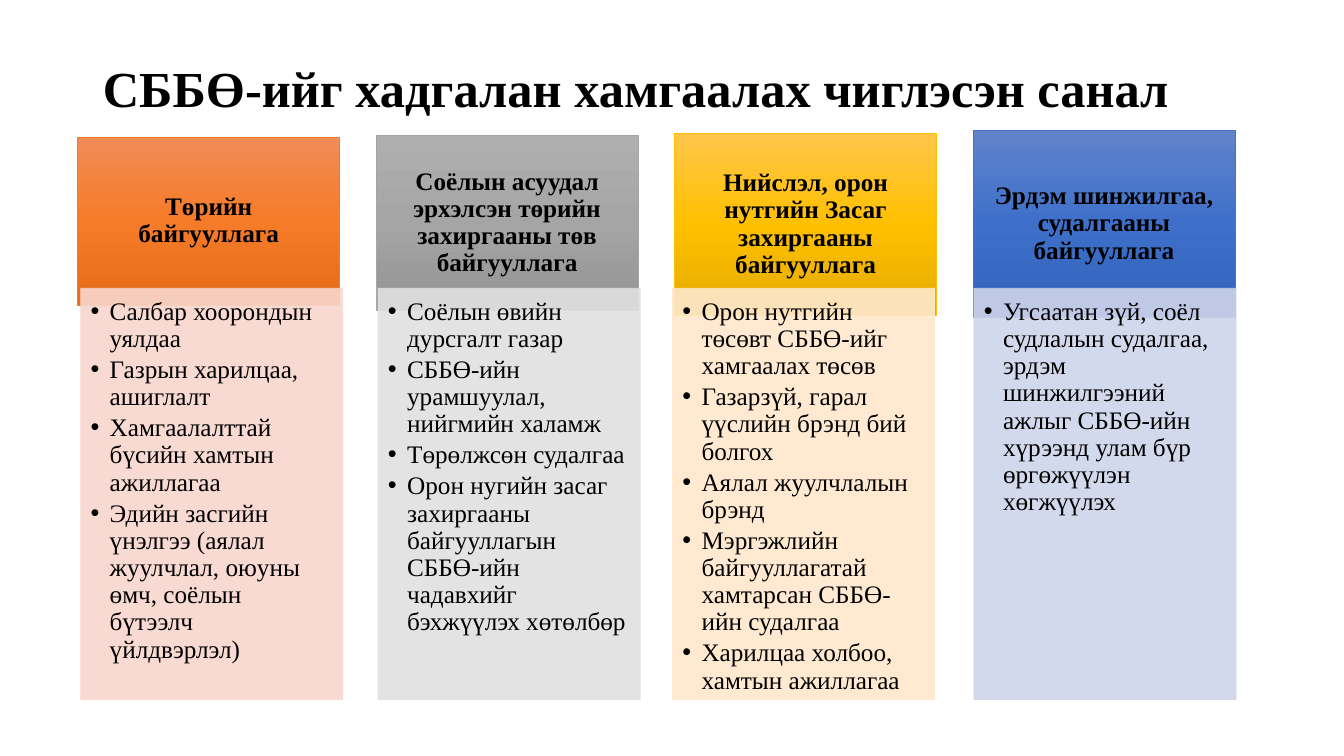
import copy
import pptx
import pptx.dml.color
import pptx.enum.shapes
import pptx.enum.text
import pptx.oxml.ns
import pptx.oxml.xmlchemy
import pptx.util
from lxml import etree

Inches = pptx.util.Inches
Pt = pptx.util.Pt
qn = pptx.oxml.ns.qn
ALIGN = pptx.enum.text.PP_ALIGN
ANCHOR = pptx.enum.text.MSO_ANCHOR

COLORS = {"text": "000000"}
FIRST_LEFT, PITCH, WIDTH = 0.77, 2.96, 2.6
BODY_TOP, BODY_HEIGHT = 2.86, 4.08
TITLE = "СББӨ-ийг хадгалан хамгаалах чиглэсэн санал"

COLUMNS = [
    {
        "header": "Төрийн байгууллага",
        "top": 1.36, "height": 1.67, "body_shift": 0.03,
        "colors": {"stops": ["F18C57", "F67B28", "E56C19"], "line": "ED7D31", "body": "F8D7CE"},
        "points": [
            "Салбар хоорондын уялдаа",
            "Газрын харилцаа, ашиглалт",
            "Хамгаалалттай бүсийн хамтын ажиллагаа",
            "Эдийн засгийн үнэлгээ (аялал жуулчлал, оюуны өмч, соёлын бүтээлч үйлдвэрлэл)",
        ],
    },
    {
        "header": "Соёлын асуудал эрхэлсэн төрийн захиргааны төв байгууллага",
        "top": 1.34, "height": 1.74, "body_shift": 0.02,
        "colors": {"stops": ["AFAFAF", "A5A5A5", "939393"], "line": "A5A5A5", "body": "E1E1E1"},
        "points": [
            "Соёлын өвийн дурсгалт газар",
            "СББӨ-ийн урамшуулал, нийгмийн халамж",
            "Төрөлжсөн судалгаа",
            "Орон нугийн засаг захиргааны байгууллагын СББӨ-ийн чадавхийг бэхжүүлэх хөтөлбөр",
        ],
    },
    {
        "header": "Нийслэл, орон нутгийн Засаг захиргааны байгууллага",
        "top": 1.32, "height": 1.81, "body_shift": -0.02,
        "colors": {"stops": ["FFC64B", "FFC000", "E3AB00"], "line": "FFC000", "body": "FFE8CC"},
        "points": [
            "Орон нутгийн төсөвт СББӨ-ийг хамгаалах төсөв",
            "Газарзүй, гарал үүслийн брэнд бий болгох",
            "Аялал жуулчлалын брэнд",
            "Мэргэжлийн байгууллагатай хамтарсан СББӨ-ийн судалгаа",
            "Харилцаа холбоо, хамтын ажиллагаа",
        ],
    },
    {
        "header": "Эрдэм шинжилгаа, судалгааны байгууллага",
        "top": 1.29, "height": 1.86, "body_shift": 0.01,
        "colors": {"stops": ["6183CB", "3E70CA", "3062BB"], "line": "4472C4", "body": "CFD5EA"},
        "points": [
            "Угсаатан зүй, соёл судлалын судалгаа, эрдэм шинжилгээний ажлыг СББӨ-ийн "
            "хүрээнд улам бүр өргөжүүлэн хөгжүүлэх",
        ],
    },
]


def rgb(value):
    return pptx.dml.color.RGBColor.from_string(value)


def assign(target, values):
    for name, value in values.items():
        setattr(target, name, value)


def write(frame, texts, insets, anchor, align, size, bold=False, after=0):
    left, top, right, bottom = map(Inches, insets)
    assign(frame, {
        "word_wrap": True, "auto_size": pptx.enum.text.MSO_AUTO_SIZE.NONE,
        "vertical_anchor": anchor, "margin_left": left, "margin_top": top,
        "margin_right": right, "margin_bottom": bottom,
    })
    for index, text in enumerate(texts):
        para = frame.add_paragraph() if index else frame.paragraphs[0]
        assign(para, {"alignment": align, "line_spacing": 0.9, "space_after": Pt(after)})
        span = para.add_run()
        span.text = text
        assign(span.font, {"name": "Times New Roman", "size": Pt(size), "bold": bold})
        span.font.color.rgb = rgb(COLORS["text"])


def add_box(page, box, line_color):
    shape = page.shapes.add_shape(pptx.enum.shapes.MSO_SHAPE.RECTANGLE, *map(Inches, box))
    shape.shadow.inherit = False
    shape.line.color.rgb = rgb(line_color)
    shape.line.width = Pt(0.5)
    return shape


def add_header(page, box, column):
    shape = add_box(page, box, column["colors"]["line"])
    shape.fill.gradient()
    shape.fill.gradient_angle = 270
    stop_list = shape._element.spPr.find(".//" + qn("a:gsLst"))
    stop_list.append(copy.deepcopy(stop_list[-1]))
    for index, stop in enumerate(shape.fill.gradient_stops):
        stop.position = index / 2
        stop.color.rgb = rgb(column["colors"]["stops"][index])
    write(shape.text_frame, [column["header"]], (0.14, 0.08, 0.14, 0.08),
          ANCHOR.MIDDLE, ALIGN.CENTER, 18, bold=True)


def add_body(page, box, column):
    color = column["colors"]["body"]
    shape = add_box(page, box, color)
    shape.fill.solid()
    shape.fill.fore_color.rgb = rgb(color)
    for element in shape._element.spPr.iter(qn("a:srgbClr")):
        etree.SubElement(element, qn("a:alpha"), val="90000")
    write(shape.text_frame, column["points"], (0.1, 0.1, 0.14, 0.16),
          ANCHOR.TOP, ALIGN.LEFT, 18, after=2.7)
    for para in shape.text_frame.paragraphs:
        properties = para._p.get_or_add_pPr()
        properties.set("marL", str(Inches(0.19)))
        properties.set("indent", str(-Inches(0.19)))
        etree.SubElement(properties, qn("a:buFont"), typeface="Arial")
        etree.SubElement(properties, qn("a:buChar"), char="•")


def add_title(page, box):
    title = page.shapes.title
    assign(title, dict(zip(("left", "top", "width", "height"), map(Inches, box))))
    write(title.text_frame, [TITLE], (0.1, 0.05, 0.1, 0.05),
          ANCHOR.MIDDLE, ALIGN.LEFT, 36, bold=True)


def main():
    deck = pptx.Presentation()
    assign(deck, {"slide_width": Inches(13.33), "slide_height": Inches(7.5)})
    page = deck.slides.add_slide(deck.slide_layouts.get_by_name("Title Only"))
    add_title(page, (0.92, 0.4, 11.5, 1))
    for index, column in enumerate(COLUMNS):
        left = FIRST_LEFT + index * PITCH
        add_header(page, (left, column["top"], WIDTH, column["height"]), column)
        add_body(page, (left + column["body_shift"], BODY_TOP, WIDTH, BODY_HEIGHT), column)
    deck.save("out.pptx")


if __name__ == "__main__":
    main()
